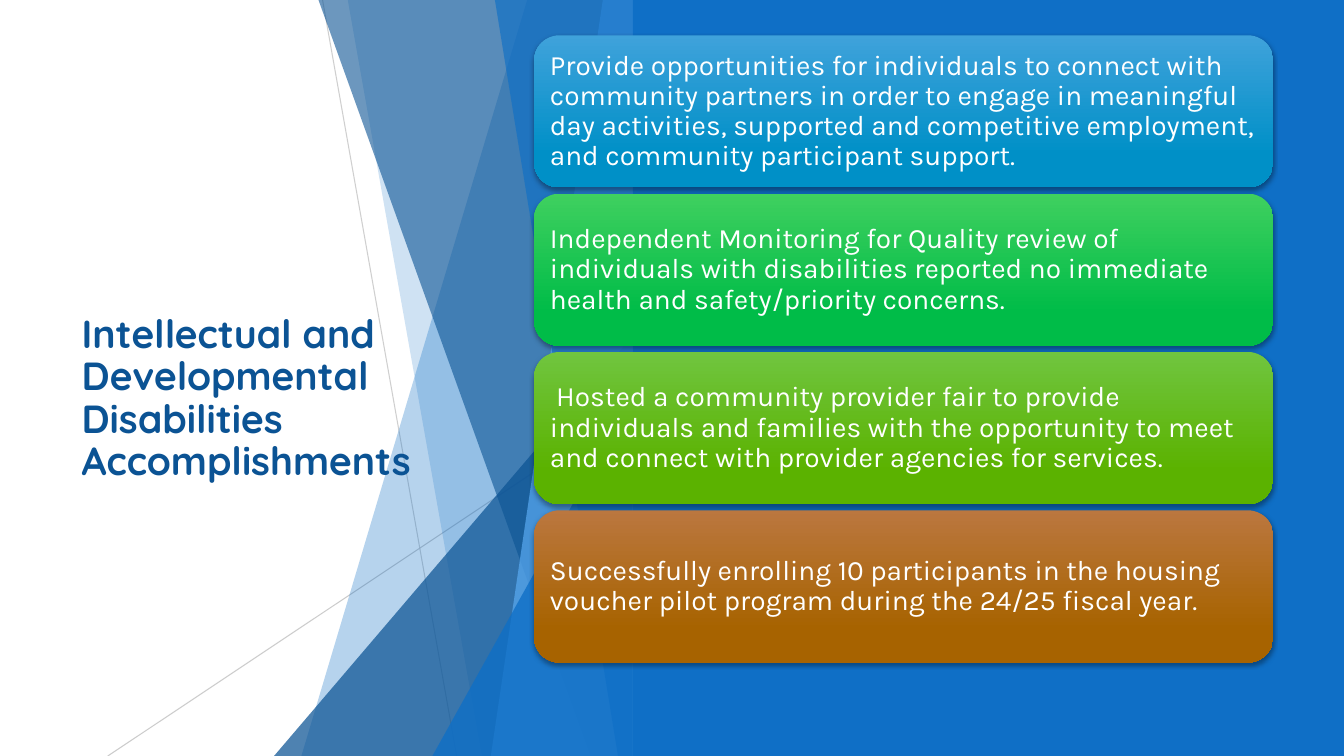
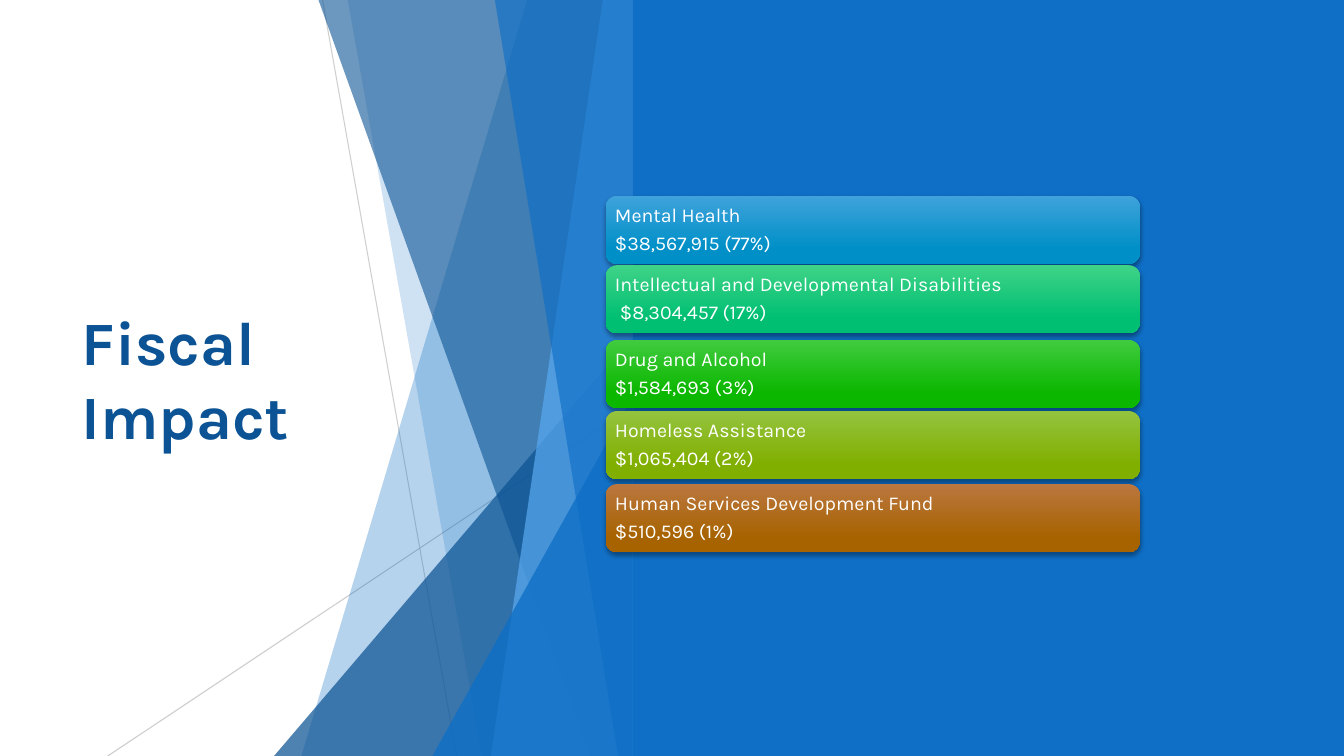
from dataclasses import dataclass

from lxml import etree
from pptx import Presentation
from pptx.dml.color import RGBColor
from pptx.enum import shapes, text
from pptx.oxml import ns
from pptx.util import Pt


@dataclass(frozen=True)
class Theme:
    blue: str = "0F6FC6"
    navy: str = "0B5394"
    sky: str = "59AAF2"
    grey: str = "BFBFBF"
    white: str = "FFFFFF"
    black: str = "000000"
    body_font: str = "Karla"
    heading_font: str = "Quicksand"
    heading_size: float = 28
    display_size: float = 44
    large_size: float = 20
    small_size: float = 14


THEME = Theme()
WIDTH, HEIGHT = 960, 540
EDGE = 452

AZURE = ("3FA2DB", "0090C7")
TEAL = ("3FD387", "00BF73")
EMERALD = ("3FD05F", "00BC48")
GREEN = ("40CB3F", "0CB700")
LEAF = ("70C53F", "5BB200")
OLIVE = ("94C33F", "81AF00")
BROWN = ("BB773F", "A76300")

THIN_LINES = [
    ((230.4, 0), (326.2, HEIGHT), 75),
    ((EDGE, 290.2), (77, HEIGHT), 80),
]
FACETS = [
    ("band", 376.6, 215.3, THEME.blue, 30),
    ("band", 248.4, 344.2, THEME.blue, 20),
    ("triangle", 195.8, 239.8, THEME.navy, 72),
    ("band", 227.5, 421.9, THEME.navy, 60),
    ("band", 430.6, 350.6, THEME.sky, 70),
    ("band", 353.5, 441.4, THEME.blue, 65),
    ("triangle", 308.9, 283, THEME.blue, 80),
]
PAGES = [
    {
        "title": "Intellectual and Developmental Disabilities Accomplishments",
        "title_top": 124,
        "title_format": {"size": THEME.heading_size, "font": THEME.heading_font,
                         "spacing": 0.9},
        "left": 381.5, "width": 528, "height": 108.7, "inset": 6,
        "tops": [25.2 + 113.1 * row for row in range(4)],
        "size": THEME.large_size,
        "indent": 4.5,
        "indented": {(2, 0)},
        "cards": [
            (AZURE, ["Provide opportunities for individuals to connect with community "
                     "partners in order to engage in meaningful day activities, supported "
                     "and competitive employment, and community participant support."]),
            (EMERALD, ["Independent Monitoring for Quality review of individuals with "
                       "disabilities reported no immediate health and safety/priority "
                       "concerns."]),
            (LEAF, ["Hosted a community provider fair to provide individuals and families "
                    "with the opportunity to meet and connect with provider agencies for "
                    "services."]),
            (BROWN, ["Successfully enrolling 10 participants in the housing voucher pilot "
                     "program during the 24/25 fiscal year."]),
        ],
    },
    {
        "title": "Fiscal Impact",
        "title_top": 108.7,
        "title_format": {"size": THEME.display_size, "font": THEME.body_font},
        "left": 432.7, "width": 381.6, "height": 48.7, "inset": 4.2,
        "tops": [139.9, 189.4, 242.8, 293.6, 345.8],
        "size": THEME.small_size,
        "indent": 3.6,
        "indented": {(1, 1)},
        "cards": [
            (AZURE, ["Mental Health", "$38,567,915 (77%)"]),
            (TEAL, ["Intellectual and Developmental Disabilities", "$8,304,457 (17%)"]),
            (GREEN, ["Drug and Alcohol", "$1,584,693 (3%)"]),
            (OLIVE, ["Homeless Assistance", "$1,065,404 (2%)"]),
            (BROWN, ["Human Services Development Fund", "$510,596 (1%)"]),
        ],
    },
]


def write(para, words, *, size, font, colour=THEME.white, bold=False,
          spacing=1.0, after=0, indent=0):
    para.alignment = text.PP_ALIGN.LEFT
    para.line_spacing = spacing
    para.space_before = Pt(0)
    para.space_after = Pt(after)
    if indent:
        para._p.get_or_add_pPr().set("indent", str(Pt(indent)))
    span = para.add_run()
    span.text = words
    span.font.size = Pt(size)
    span.font.name = font
    span.font.bold = bold
    span.font.color.rgb = RGBColor.from_string(colour)


def set_alpha(holder, percent):
    colour = next(holder.iter(ns.qn("a:srgbClr")))
    etree.SubElement(colour, ns.qn("a:alpha")).set("val", str(percent * 1000))


def paint(shape, colour, alpha=100):
    shape.shadow.inherit = False
    shape.line.fill.background()
    shape.fill.solid()
    shape.fill.fore_color.rgb = RGBColor.from_string(colour)
    if alpha < 100:
        set_alpha(shape.element.spPr, alpha)


def add_thin_line(page, start, end, alpha):
    line = page.shapes.add_connector(
        shapes.MSO_CONNECTOR.STRAIGHT, *(Pt(value) for value in start + end))
    line.line.width = Pt(0.75)
    line.line.color.rgb = RGBColor.from_string(THEME.grey)
    set_alpha(line.element.spPr, alpha)
    etree.SubElement(line.element.spPr, ns.qn("a:effectLst"))


def add_band(page, top_x, bottom_x):
    outline = page.shapes.build_freeform(Pt(top_x), Pt(0))
    corners = [(EDGE, 0), (EDGE, HEIGHT), (bottom_x, HEIGHT)]
    outline.add_line_segments([(Pt(x), Pt(y)) for x, y in corners], close=True)
    return outline.convert_to_shape()


def add_triangle(page, left, top):
    triangle = page.shapes.add_shape(
        shapes.MSO_SHAPE.ISOSCELES_TRIANGLE,
        Pt(left), Pt(top), Pt(EDGE - left), Pt(HEIGHT - top))
    triangle.adjustments[0] = 1
    return triangle


def add_backdrop(page):
    for start, end, alpha in THIN_LINES:
        add_thin_line(page, start, end, alpha)
    for kind, first, second, colour, alpha in FACETS:
        draw = add_band if kind == "band" else add_triangle
        paint(draw(page, first, second), colour, alpha)
    panel = page.shapes.add_shape(
        shapes.MSO_SHAPE.RECTANGLE, Pt(EDGE), Pt(0), Pt(WIDTH - EDGE), Pt(HEIGHT))
    paint(panel, THEME.blue)


def add_title(page, content):
    title = page.shapes.title
    title.left, title.top = Pt(51.1), Pt(content["title_top"])
    title.width, title.height = Pt(279.4), Pt(322.6)
    frame = title.text_frame
    frame.word_wrap = True
    frame.auto_size = text.MSO_AUTO_SIZE.NONE
    frame.vertical_anchor = text.MSO_ANCHOR.MIDDLE
    write(frame.paragraphs[0], content["title"], colour=THEME.navy, bold=True,
          **content["title_format"])
    title.element.getparent().append(title.element)


def add_shadow(shape):
    shape.shadow.inherit = False
    effects = shape.element.spPr.find(ns.qn("a:effectLst"))
    shadow = etree.SubElement(effects, ns.qn("a:outerShdw"), blurRad=str(Pt(3)),
                              dist=str(Pt(2)), dir="5400000", rotWithShape="0")
    etree.SubElement(shadow, ns.qn("a:srgbClr"), val=THEME.black)
    set_alpha(shadow, 35)


def add_card(page, content, row):
    colours, lines = content["cards"][row]
    card = page.shapes.add_shape(
        shapes.MSO_SHAPE.ROUNDED_RECTANGLE, Pt(content["left"]),
        Pt(content["tops"][row]), Pt(content["width"]), Pt(content["height"]))
    card.line.fill.background()
    card.fill.gradient()
    card.fill.gradient_angle = 270
    for stop, colour, position in zip(card.fill.gradient_stops, colours, (0, 0.78)):
        stop.color.rgb = RGBColor.from_string(colour)
        stop.position = position
    add_shadow(card)
    frame = card.text_frame
    frame.word_wrap = True
    frame.vertical_anchor = text.MSO_ANCHOR.MIDDLE
    frame.margin_left = frame.margin_right = Pt(content["inset"])
    frame.margin_top = frame.margin_bottom = Pt(content["inset"])
    for number, words in enumerate(lines):
        para = frame.add_paragraph() if number else frame.paragraphs[0]
        indent = content["indent"] if (row, number) in content["indented"] else 0
        write(para, words, size=content["size"], font=THEME.body_font,
              spacing=0.9, after=content["size"] * 0.35, indent=indent)


def main():
    deck = Presentation()
    deck.slide_width, deck.slide_height = Pt(WIDTH), Pt(HEIGHT)
    for content in PAGES:
        page = deck.slides.add_slide(deck.slide_layouts[5])
        add_backdrop(page)
        add_title(page, content)
        for row in range(len(content["cards"])):
            add_card(page, content, row)
    deck.save("out.pptx")


if __name__ == "__main__":
    main()
